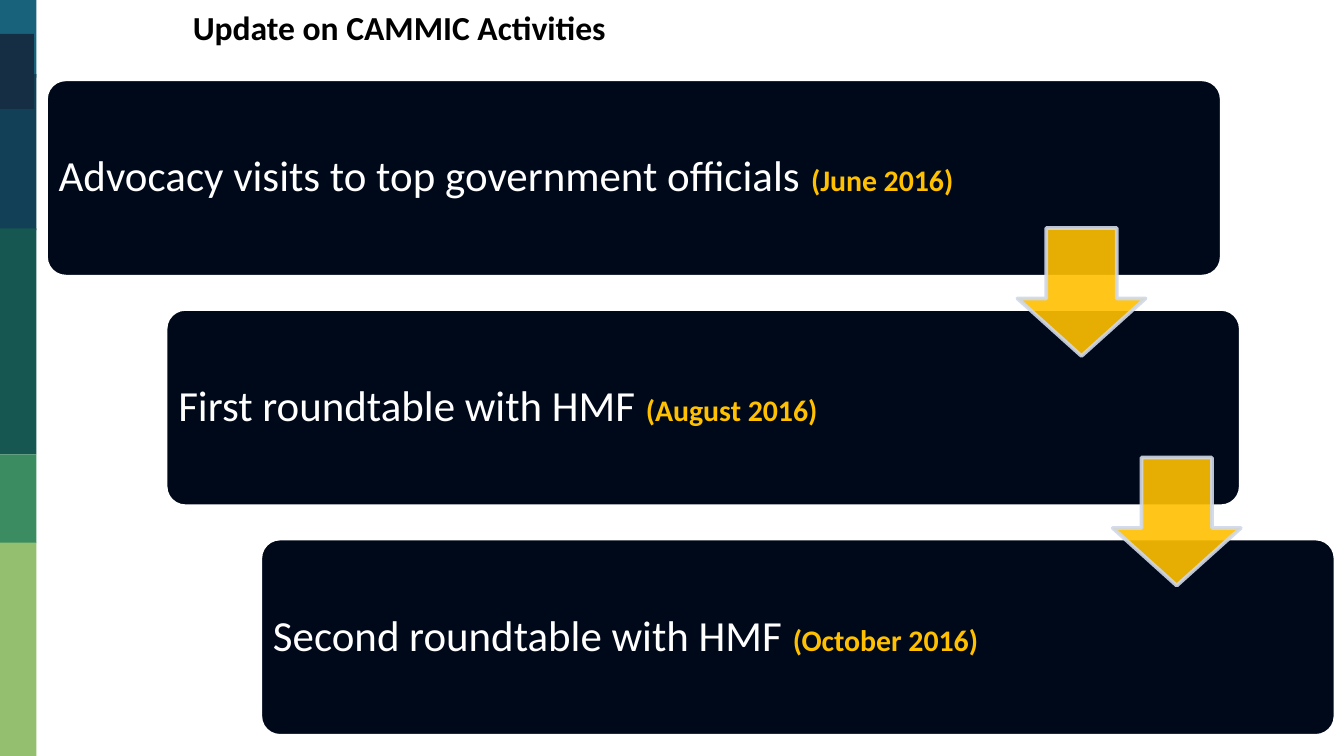
from lxml import etree
from pptx import Presentation
from pptx.dml.color import RGBColor
from pptx.enum.shapes import MSO_SHAPE as Shape
from pptx.enum.text import MSO_ANCHOR as Anchor, PP_ALIGN as Align
from pptx.oxml.ns import qn
from pptx.util import Cm, Pt

FONT = "Calibri"
GOLD = "FFC000"
WHITE = "FFFFFF"

# Sidebar bands: top, width, height, colour
BANDS = [
    (0, 0.69, 1.47, "18637B"),
    (1.4, 0.69, 2.95, "124057"),
    (4.32, 0.69, 4.27, "165751"),
    (8.59, 0.69, 1.68, "3B8D61"),
    (10.26, 0.69, 4.03, "94BF6E"),
    (0.64, 0.64, 1.42, "152E43"),
]

# Steps: left, card width, text width, activity, date
STEPS = [
    (0.87, 22.22, 18.06, "Advocacy visits to top government officials ", "(June 2016)"),
    (3.13, 20.32, 16.1, "First roundtable with HMF ", "(August 2016)"),
    (4.92, 20.32, 16.1, "Second roundtable with HMF ", "(October 2016)"),
]
STEP_TOP, STEP_PITCH, STEP_HEIGHT = 1.5, 4.34, 3.73
ARROW_LEFTS = [19.23, 21.03]
ARROW_TOP, ARROW_SIZE = 4.31, 2.42


def rgb(value):
    return RGBColor.from_string(value)


def add_run(p, text, size=18, color="000000", bold=False):
    r = p.add_run()
    r.text = text
    r.font.name = FONT
    r.font.size = Pt(size)
    r.font.bold = bold
    r.font.color.rgb = rgb(color)


def set_alpha(fill, percent):
    """Make the solid colour of a fill or line partly transparent."""
    color = fill._xPr.find(qn("a:solidFill"))[0]
    etree.SubElement(color, qn("a:alpha"), val=str(percent * 1000))


def add_block(slide, kind, left, top, width, height, fill, line=None, adj=()):
    sp = slide.shapes.add_shape(kind, Cm(left), Cm(top), Cm(width), Cm(height))
    sp.shadow.inherit = False
    sp.fill.solid()
    sp.fill.fore_color.rgb = rgb(fill)
    if line:
        sp.line.color.rgb = rgb(line)
        sp.line.width = Pt(2)
    else:
        sp.line.fill.background()
    for i, value in enumerate(adj):
        sp.adjustments[i] = value
    return sp


def set_title(slide, text):
    sp = slide.shapes.title
    sp.left, sp.top, sp.width, sp.height = Cm(3.39), Cm(0), Cm(19.48), Cm(1.02)
    tf = sp.text_frame
    tf.word_wrap = True
    tf.vertical_anchor = Anchor.TOP
    p = tf.paragraphs[0]
    p.alignment = Align.LEFT
    add_run(p, text, bold=True)


def add_step(slide, top, left, width, text_width, activity, date):
    add_block(slide, Shape.ROUNDED_RECTANGLE, left, top, width, STEP_HEIGHT,
              "00091A", line=WHITE, adj=[0.1])
    box = slide.shapes.add_textbox(Cm(left), Cm(top), Cm(text_width), Cm(STEP_HEIGHT))
    tf = box.text_frame
    tf.word_wrap = True
    tf.vertical_anchor = Anchor.MIDDLE
    tf.margin_left = tf.margin_right = tf.margin_top = tf.margin_bottom = Cm(0.24)
    p = tf.paragraphs[0]
    p.line_spacing = 0.9
    add_run(p, activity, size=23, color=WHITE)
    add_run(p, date, size=16, color=GOLD, bold=True)


def add_arrow(slide, left, top):
    sp = add_block(slide, Shape.DOWN_ARROW, left, top, ARROW_SIZE, ARROW_SIZE,
                   GOLD, line="D0D8E8", adj=[0.55, 0.45])
    set_alpha(sp.fill, 90)
    set_alpha(sp.line.fill, 90)


def main():
    prs = Presentation()
    prs.slide_width, prs.slide_height = Cm(25.4), Cm(14.29)
    slide = prs.slides.add_slide(prs.slide_layouts[5])

    # Sidebar
    for top, width, height, color in BANDS:
        add_block(slide, Shape.RECTANGLE, 0, top, width, height, color)

    set_title(slide, "Update on CAMMIC Activities")

    # Staggered steps, then the arrows that link them
    for i, step in enumerate(STEPS):
        add_step(slide, STEP_TOP + i * STEP_PITCH, *step)
    for i, left in enumerate(ARROW_LEFTS):
        add_arrow(slide, left, ARROW_TOP + i * STEP_PITCH)

    prs.save("out.pptx")


if __name__ == "__main__":
    main()
